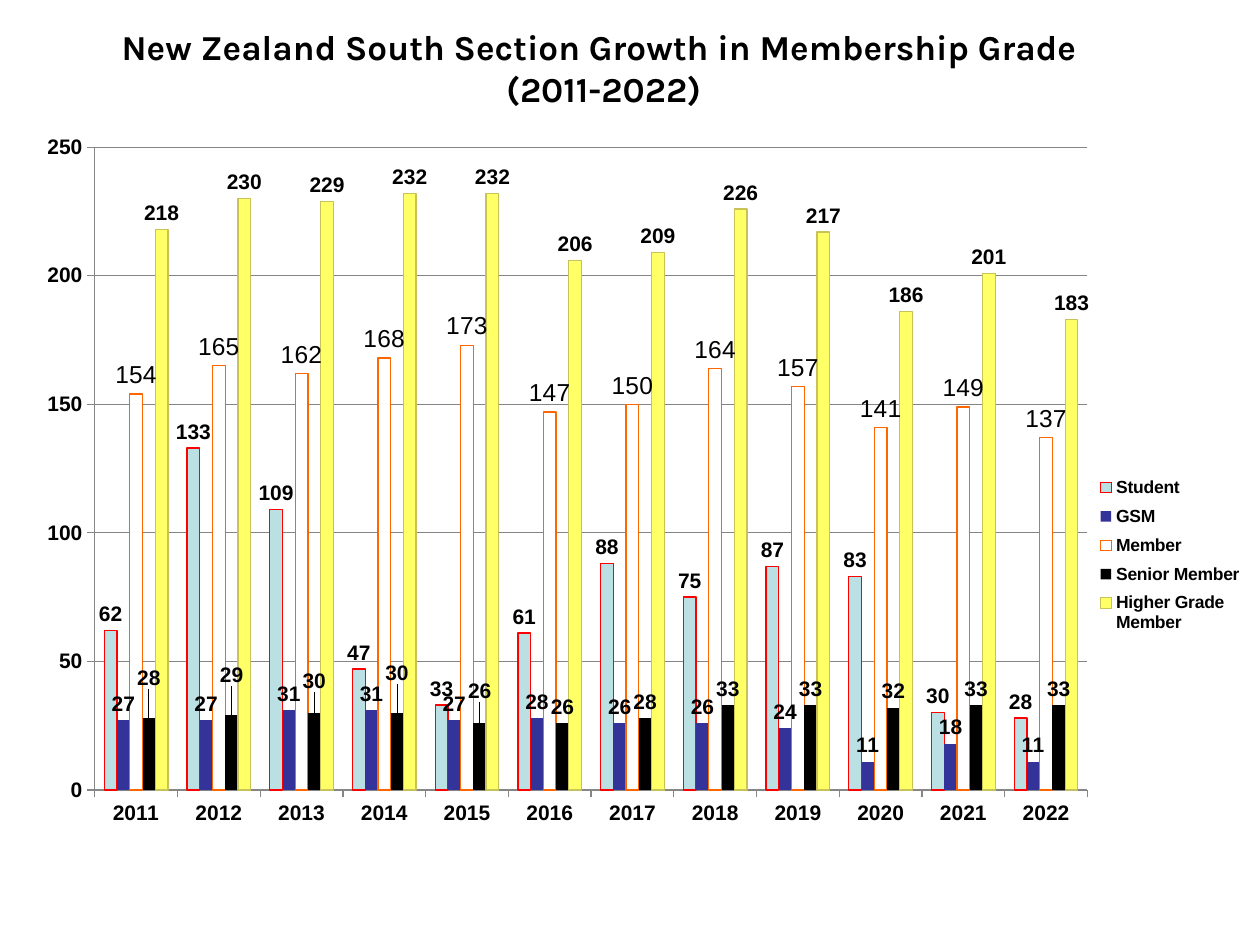
from copy import deepcopy
from dataclasses import dataclass, field

from pptx import Presentation
from pptx.chart.data import CategoryChartData as ChartData
from pptx.dml.color import RGBColor as RGB
from pptx.enum.chart import XL_CHART_TYPE as Kind
from pptx.enum.chart import XL_LABEL_POSITION as LabelPos
from pptx.enum.chart import XL_LEGEND_POSITION as LegendPos
from pptx.enum.chart import XL_TICK_MARK as Tick
from pptx.enum.text import MSO_ANCHOR as Anchor
from pptx.enum.text import PP_ALIGN as Align
from pptx.oxml import parse_xml
from pptx.oxml.ns import nsdecls, qn
from pptx.util import Cm, Pt


@dataclass(frozen=True)
class Theme:
    """Colours and type styles of the slide."""

    ink: str = "000000"
    grid: str = "868686"
    title: dict = field(default_factory=lambda: dict(name="Karla", size=Pt(20), bold=True))
    base: dict = field(default_factory=lambda: dict(name="Arial", size=Pt(18), bold=False))
    axis: dict = field(default_factory=lambda: dict(name="Arial", size=Pt(12), bold=True))
    member: dict = field(default_factory=lambda: dict(name="Arial", size=Pt(14), bold=False))
    legend: dict = field(default_factory=lambda: dict(name="Arial", size=Pt(10), bold=True))


THEME = Theme()
YEARS = [str(year) for year in range(2011, 2023)]
GRADES = [
    ("Student", "BBE0E3", "FF0000", THEME.axis,
     (62, 133, 109, 47, 33, 61, 88, 75, 87, 83, 30, 28)),
    ("GSM", "333399", None, THEME.axis,
     (27, 27, 31, 31, 27, 28, 26, 26, 24, 11, 18, 11)),
    ("Member", "FFFFFF", "FF6600", THEME.member,
     (154, 165, 162, 168, 173, 147, 150, 164, 157, 141, 149, 137)),
    ("Senior Member", "000000", None, THEME.axis,
     (28, 29, 30, 30, 26, 26, 28, 33, 33, 32, 33, 33)),
    ("Higher Grade Member", "FFFF66", "C8C358", THEME.axis,
     (218, 230, 229, 232, 232, 206, 209, 226, 217, 186, 201, 183)),
]
SENIOR_LABEL_LIFTS = (-0.03, -0.03, -0.02, -0.03, -0.02)


def apply(obj, values):
    """Set each named attribute on an object."""
    for name, value in values.items():
        setattr(obj, name, value)


def layout_xml(**parts):
    """Return a manual chart layout element."""
    body = "".join(f'<c:{name} val="{value}"/>' for name, value in parts.items())
    return parse_xml(f'<c:layout {nsdecls("c")}><c:manualLayout>{body}'
                     "</c:manualLayout></c:layout>")


def place(element, index, **parts):
    """Replace the layout of a chart element."""
    for old in element.findall(qn("c:layout")):
        element.remove(old)
    element.insert(index, layout_xml(**parts))


class Deck:
    """Holds the theme and the current slide."""

    def __init__(self, prs, theme):
        """Add a title-only slide."""
        self.theme = theme
        self.s = prs.slides.add_slide(prs.slide_layouts[5])

    def font(self, font, style):
        """Apply a type style in the ink colour."""
        apply(font, style)
        font.color.rgb = RGB.from_string(self.theme.ink)

    def title(self, lines, box):
        """Fill and place the title, one line for each string."""
        sp = self.s.shapes.title
        apply(sp, dict(zip(("left", "top", "width", "height"), map(Cm, box))))
        tf = sp.text_frame
        apply(tf, dict(word_wrap=True, vertical_anchor=Anchor.MIDDLE))
        p = tf.paragraphs[0]
        p.alignment = Align.CENTER
        for i, line in enumerate(lines):
            if i:
                p.add_line_break()
            r = p.add_run()
            r.text = line
            self.font(r.font, self.theme.title)

    def chart(self, years, grades, box):
        """Add the clustered columns and return the chart."""
        data = ChartData(number_format="#,##0")
        data.categories = years
        for name, _, _, _, values in grades:
            data.add_series(name, values)
        chart = self.s.shapes.add_chart(
            Kind.COLUMN_CLUSTERED, *map(Cm, box), data).chart
        chart.has_title = False
        self.font(chart.font, self.theme.base)
        plot = chart.plots[0]
        apply(plot, dict(gap_width=150, overlap=0, vary_by_categories=False))
        for series, (_, fill, line, style, _) in zip(plot.series, grades):
            self.series(series, fill, line, style)
        place(chart._chartSpace.chart.plotArea, 0, layoutTarget="inner",
              xMode="edge", yMode="edge", x=0.096, y=0.027, w=0.756, h=0.816)
        return chart

    def series(self, series, fill, line, style):
        """Colour one series and label its columns."""
        series.invert_if_negative = False
        series.format.fill.solid()
        series.format.fill.fore_color.rgb = RGB.from_string(fill)
        if line:
            series.format.line.width = Pt(0.75)
            series.format.line.color.rgb = RGB.from_string(line)
        else:
            series.format.line.fill.background()
        labels = series.data_labels
        apply(labels, dict(show_value=True, position=LabelPos.OUTSIDE_END))
        self.font(labels.font, style)

    def lift_labels(self, series, lifts):
        """Move the first labels of a series upwards."""
        labels = series.data_labels._element
        for i, lift in enumerate(lifts):
            label = parse_xml(f'<c:dLbl {nsdecls("c")}><c:idx val="{i}"/></c:dLbl>')
            label.append(layout_xml(x=0, y=lift))
            label.append(deepcopy(labels.find(qn("c:txPr"))))
            for tag, value in (("dLblPos", "outEnd"), ("showLegendKey", 0),
                               ("showVal", 1), ("showCatName", 0),
                               ("showSerName", 0), ("showPercent", 0),
                               ("showBubbleSize", 0)):
                label.append(parse_xml(f'<c:{tag} {nsdecls("c")} val="{value}"/>'))
            labels.insert(i, label)

    def axes(self, chart, top, step):
        """Format both axes and the gridlines."""
        grey = RGB.from_string(self.theme.grid)
        value = chart.value_axis
        apply(value, dict(minimum_scale=0, maximum_scale=top, major_unit=step,
                          has_major_gridlines=True))
        apply(value.tick_labels, dict(number_format="#,##0",
                                      number_format_is_linked=False))
        for axis in (value, chart.category_axis):
            apply(axis, dict(major_tick_mark=Tick.OUTSIDE, minor_tick_mark=Tick.NONE))
            self.font(axis.tick_labels.font, self.theme.axis)
        for part in (value, chart.category_axis, value.major_gridlines):
            part.format.line.width = Pt(0.75)
            part.format.line.color.rgb = grey

    def legend(self, chart):
        """Add the legend to the right of the plot."""
        chart.has_legend = True
        apply(chart.legend, dict(position=LegendPos.RIGHT, include_in_layout=False))
        self.font(chart.legend.font, self.theme.legend)
        place(chart.legend._element, 1, xMode="edge", yMode="edge",
              x=0.855, y=0.435, w=0.12, h=0.22)


def main():
    """Build and save the slide."""
    prs = Presentation()
    apply(prs, dict(slide_width=Cm(25.4), slide_height=Cm(19.05)))
    deck = Deck(prs, THEME)
    deck.title(("New Zealand South Section Growth in Membership Grade ",
                "(2011-2022)"), (1.27, 0.43, 21.8, 1.85))
    chart = deck.chart(YEARS, GRADES, (-0.63, 2.54, 26.47, 15.88))
    deck.axes(chart, top=250, step=50)
    deck.legend(chart)
    deck.lift_labels(chart.plots[0].series[3], SENIOR_LABEL_LIFTS)
    prs.save("out.pptx")


if __name__ == "__main__":
    main()
